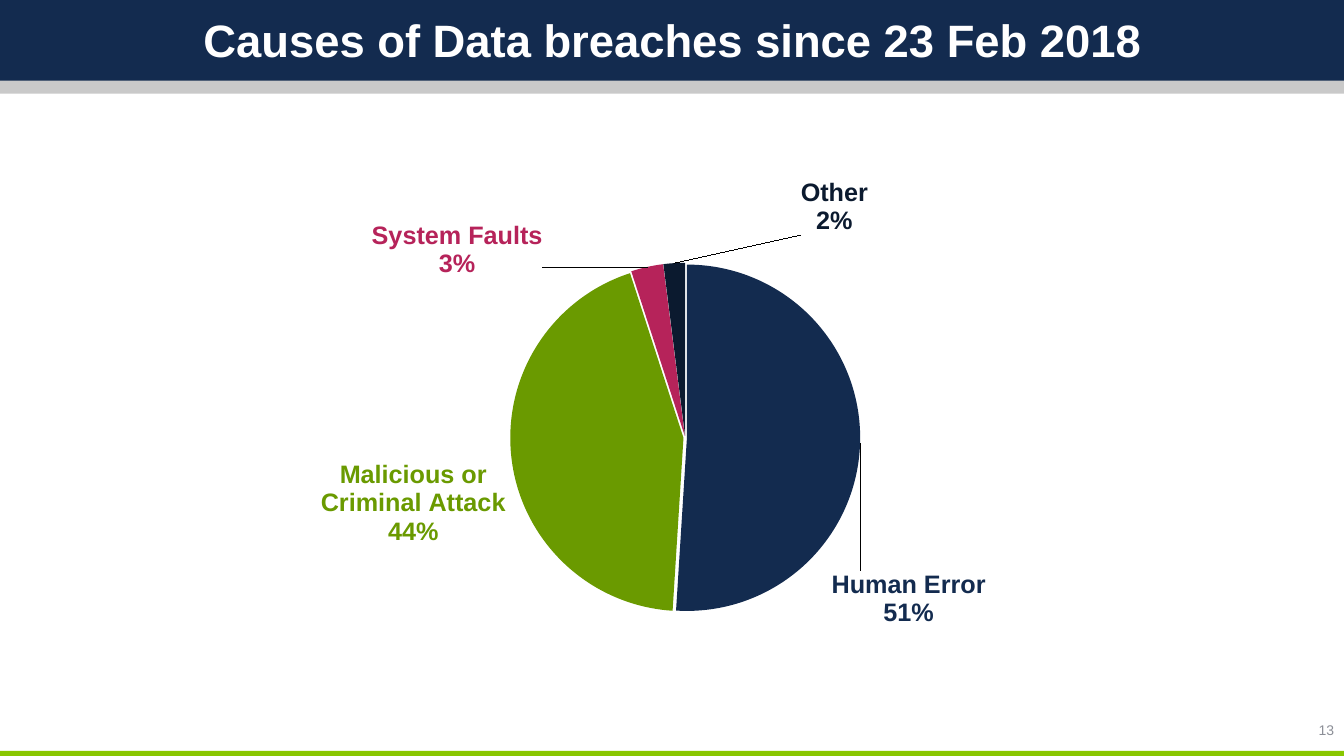
from lxml import etree
from pptx import Presentation
from pptx.chart.data import CategoryChartData
from pptx.dml.color import RGBColor
from pptx.enum.chart import XL_CHART_TYPE as ChartType, XL_LABEL_POSITION as LabelPosition
from pptx.enum.shapes import MSO_SHAPE as Shape
from pptx.enum.text import MSO_ANCHOR as Anchor, PP_ALIGN as Align
from pptx.oxml import parse_xml
from pptx.oxml.ns import nsdecls, qn
from pptx.util import Inches, Pt

NAVY = RGBColor(0x13, 0x2B, 0x4F)
SILVER = RGBColor(0xC9, 0xC9, 0xC9)
LIME = RGBColor(0x89, 0xC7, 0x00)
GREEN = RGBColor(0x6A, 0x9A, 0x00)
CRIMSON = RGBColor(0xB6, 0x23, 0x5A)
MIDNIGHT = RGBColor(0x0B, 0x1A, 0x2F)
WHITE = RGBColor(0xFF, 0xFF, 0xFF)
GREY = RGBColor(0x8C, 0x8F, 0x97)
FONT = "Arial"
WIDTH, HEIGHT = 13.33, 7.5

BANDS = [(0, 0.93, SILVER), (0, 0.8, NAVY), (7.45, 0.05, LIME)]
TEXTS = [
    ("13", (11.97, 7.13, 1.36, 0.22), 10, GREY, False, Align.RIGHT),
    ("Causes of Data breaches since 23 Feb 2018", (1.85, 0, 9.64, 0.78), 32.4, WHITE, True, Align.CENTER),
]
CAUSES = [
    ("Human Error", 51, NAVY, (-0.03, 0.28)),
    ("Malicious or Criminal Attack", 44, GREEN, None),
    ("System Faults", 3, CRIMSON, (-0.09, 0.03)),
    ("Other", 2, MIDNIGHT, (0.14, -0.04)),
]
CHART_BOX = (0.6, 1.23, 11.37, 5.51)
PLOT_BOX = {"x": 0.09, "y": 0.25, "w": 0.91, "h": 0.63}


def style_font(font, size, color, bold):
    font.name, font.size, font.bold = FONT, Pt(size), bold
    font.color.rgb = color


def manual_layout(settings):
    layout = parse_xml(f"<c:layout {nsdecls('c')}><c:manualLayout/></c:layout>")
    for tag, value in settings.items():
        etree.SubElement(layout[0], qn(f"c:{tag}")).set("val", str(value))
    return layout


def show_category_and_percent(labels):
    for tag, value in (("showVal", "0"), ("showCatName", "1"), ("showPercent", "1")):
        labels.find(qn(f"c:{tag}")).set("val", value)
    separator = etree.Element(qn("c:separator"))
    separator.text = "\n"
    labels.find(qn("c:showBubbleSize")).addnext(separator)


def add_band(slide, top, height, color):
    band = slide.shapes.add_shape(Shape.RECTANGLE, 0, Inches(top), Inches(WIDTH), Inches(height))
    band.shadow.inherit = False
    band.fill.solid()
    band.fill.fore_color.rgb = color
    band.line.fill.background()


def add_text(slide, text, box, size, color, bold, align):
    frame = slide.shapes.add_textbox(*map(Inches, box)).text_frame
    frame.word_wrap = True
    frame.vertical_anchor = Anchor.MIDDLE
    frame.text = text
    frame.paragraphs[0].alignment = align
    style_font(frame.paragraphs[0].runs[0].font, size, color, bold)


def add_causes_pie(slide):
    data = CategoryChartData()
    data.categories = [cause[0] for cause in CAUSES]
    data.add_series("Series 1", [cause[1] for cause in CAUSES])
    chart = slide.shapes.add_chart(ChartType.PIE, *map(Inches, CHART_BOX), data).chart
    chart.has_legend = False
    chart.has_title = False
    style_font(chart.font, 10, NAVY, False)
    plot = chart.plots[0]
    plot.vary_by_categories = True
    breaches = plot.series[0]

    labels = breaches.data_labels
    labels.number_format, labels.number_format_is_linked = "0%", False
    labels.position = LabelPosition.OUTSIDE_END
    style_font(labels.font, 18, NAVY, True)
    for index, (_, _, color, offset) in enumerate(CAUSES):
        point = breaches.points[index]
        point.format.fill.solid()
        point.format.fill.fore_color.rgb = color
        point.format.line.fill.background()
        point.data_label.position = LabelPosition.OUTSIDE_END
        style_font(point.data_label.font, 18, color, True)
        if offset:
            label = breaches._element.findall(".//" + qn("c:dLbl"))[index]
            label.find(qn("c:idx")).addnext(manual_layout(dict(zip("xy", offset))))

    pie = breaches._element
    for label in pie.findall(".//" + qn("c:dLbl")):
        show_category_and_percent(label)
    show_category_and_percent(pie.find(qn("c:dLbls")))
    explosion = etree.Element(qn("c:explosion"), val="1")
    pie.find(qn("c:dPt")).addprevious(explosion)

    plot_area = chart._chartSpace.find(".//" + qn("c:plotArea"))
    for layout in plot_area.findall(qn("c:layout")):
        plot_area.remove(layout)
    modes = {"layoutTarget": "inner", "xMode": "edge", "yMode": "edge"}
    plot_area.insert(0, manual_layout(modes | PLOT_BOX))


def main():
    deck = Presentation()
    deck.slide_width, deck.slide_height = Inches(WIDTH), Inches(HEIGHT)
    slide = deck.slides.add_slide(deck.slide_layouts[6])
    for band in BANDS:
        add_band(slide, *band)
    for text in TEXTS:
        add_text(slide, *text)
    add_causes_pie(slide)
    deck.save("out.pptx")


if __name__ == "__main__":
    main()
